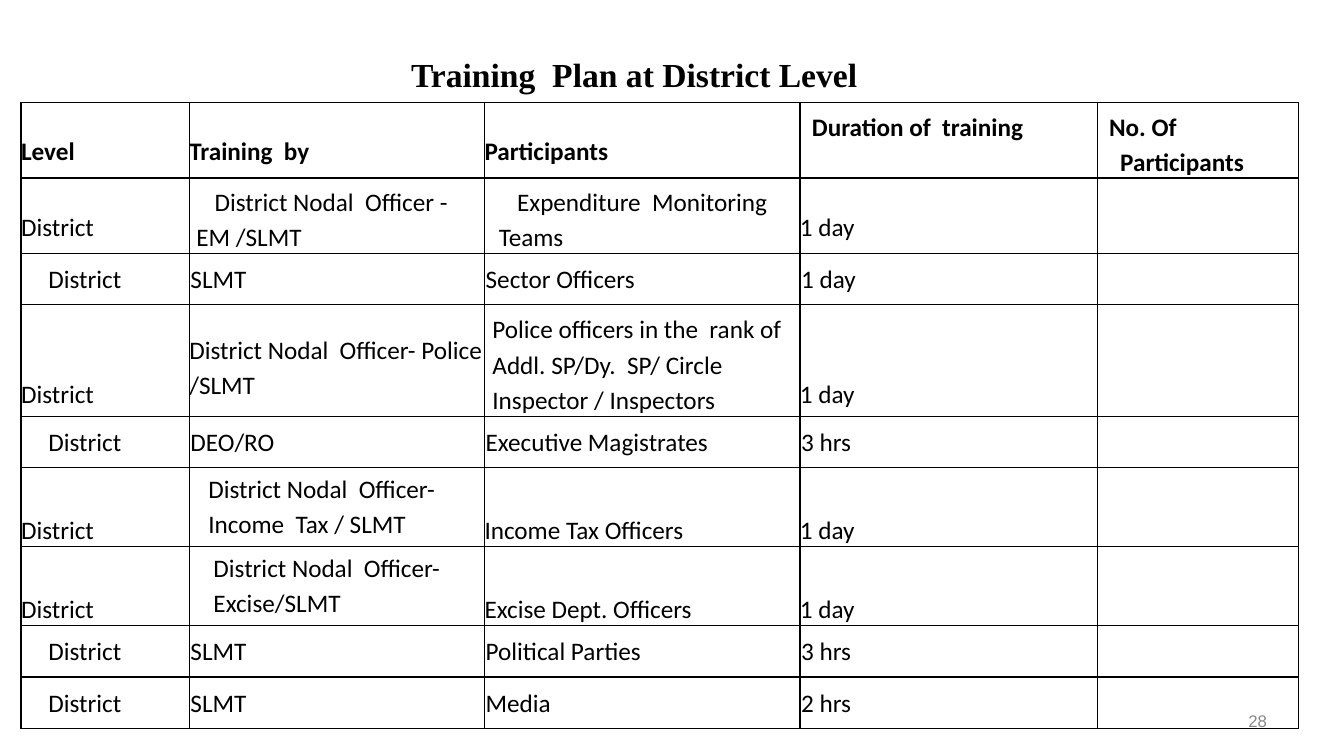
from dataclasses import dataclass

from lxml import etree
from pptx import Presentation
from pptx.dml.color import RGBColor
from pptx.enum.text import MSO_ANCHOR, PP_ALIGN
from pptx.oxml.ns import qn
from pptx.util import Cm, Pt

TOP, MIDDLE = MSO_ANCHOR.TOP, MSO_ANCHOR.MIDDLE
LEFT, RIGHT = PP_ALIGN.LEFT, PP_ALIGN.RIGHT


@dataclass(frozen=True)
class Theme:
    ink: RGBColor = RGBColor(0, 0, 0)
    muted: RGBColor = RGBColor(0x89, 0x89, 0x89)
    title_font: str = "Times New Roman"
    table_font: str = "Calibri"
    number_font: str = "Arial"
    title_size: Pt = Pt(24)
    table_size: Pt = Pt(18)
    number_size: Pt = Pt(12)
    border: Pt = Pt(1)


@dataclass(frozen=True)
class Layout:
    """Placement of text in a cell, in centimetres."""
    top: float
    left: float = 0
    first_line: float = 0
    right: float = 0
    line_spacing: float = 1.0


THEME = Theme()

# Cell layouts
LOW = Layout(0.86)
LOWER = Layout(1.21)
LOWEST = Layout(1.9)
SINGLE = Layout(0.28, left=0.03)
SINGLE_LEVEL = Layout(0.28, left=0.69)
HANGING = Layout(0.13, 0.58, -0.28, line_spacing=1.14)
NODAL_EM = Layout(0.13, 0.18, 0.46, right=0.75, line_spacing=1.14)
TEAMS = Layout(0.13, 0.36, 0.46, line_spacing=1.14)
NODAL_POLICE = Layout(0.69, line_spacing=1.14)
POLICE = Layout(0.15, 0.2, line_spacing=1.15)
NODAL_TAX = Layout(0.05, 0.48, line_spacing=1.15)
NODAL_EXCISE = Layout(0.05, 0.61, line_spacing=1.15)

SINGLE_ROW = (SINGLE_LEVEL, SINGLE, SINGLE, SINGLE)
COLUMN_WIDTHS = (4.24, 7.44, 7.95, 7.49, 5.08)

# Row height, texts, cell layouts
PLAN = (
    (1.63, ("Level", "Training  by", "Participants", "Duration of  training",
            "No. Of Participants"), (LOW, LOW, LOW, HANGING, HANGING)),
    (1.85, ("District", "District Nodal  Officer - EM /SLMT",
            "Expenditure  Monitoring Teams", "1 day"),
     (LOW, NODAL_EM, TEAMS, LOW)),
    (1.28, ("District", "SLMT", "Sector Officers", "1 day"), SINGLE_ROW),
    (2.49, ("District", "District Nodal  Officer- Police /SLMT",
            "Police officers in the  rank of Addl. SP/Dy.  SP/ Circle  "
            "Inspector / Inspectors", "1 day"),
     (LOWEST, NODAL_POLICE, POLICE, LOWEST)),
    (1.3, ("District", "DEO/RO", "Executive Magistrates", "3 hrs"), SINGLE_ROW),
    (1.98, ("District", "District Nodal  Officer- Income  Tax / SLMT",
            "Income Tax Officers", "1 day"),
     (LOWER, NODAL_TAX, LOWER, LOWER)),
    (1.98, ("District", "District Nodal  Officer-  Excise/SLMT",
            "Excise Dept. Officers", "1 day"),
     (LOWER, NODAL_EXCISE, LOWER, LOWER)),
    (1.3, ("District", "SLMT", "Political Parties", "3 hrs"), SINGLE_ROW),
    (1.3, ("District", "SLMT", "Media", "2 hrs"), SINGLE_ROW),
)


def style_font(font, name, size, color, bold=False):
    font.name, font.size, font.bold = name, size, bold
    font.color.rgb = color


def add_label(slide, box, text, align, anchor, margins, font_style):
    frame = slide.shapes.add_textbox(*map(Cm, box)).text_frame
    frame.word_wrap = True
    frame.vertical_anchor = anchor
    frame.margin_left = frame.margin_right = Cm(margins[0])
    frame.margin_top = frame.margin_bottom = Cm(margins[1])
    line = frame.paragraphs[0]
    line.text, line.alignment = text, align
    style_font(line.font, *font_style)


def draw_borders(cell):
    properties = cell._tc.get_or_add_tcPr()
    for position, side in enumerate(("lnL", "lnR", "lnT", "lnB")):
        border = etree.Element(qn(f"a:{side}"), w=str(int(THEME.border)))
        fill = etree.SubElement(border, qn("a:solidFill"))
        etree.SubElement(fill, qn("a:srgbClr"), val=str(THEME.ink))
        properties.insert(position, border)


def write_cell(cell, text, layout, bold):
    cell.vertical_anchor = TOP
    cell.margin_left = cell.margin_bottom = 0
    cell.margin_right, cell.margin_top = Cm(layout.right), Cm(layout.top)
    line = cell.text_frame.paragraphs[0]
    line.text, line.line_spacing = text, layout.line_spacing
    style_font(line.font, THEME.table_font, THEME.table_size, THEME.ink, bold)
    indents = line._p.get_or_add_pPr()
    indents.set("marL", str(Cm(layout.left)))
    indents.set("indent", str(Cm(layout.first_line)))


def add_plan_table(slide, left, top):
    heights = [height for height, _, _ in PLAN]
    plan = slide.shapes.add_table(
        len(PLAN), len(COLUMN_WIDTHS), Cm(left), Cm(top),
        Cm(sum(COLUMN_WIDTHS)), Cm(sum(heights))).table
    plan.first_row = plan.horz_banding = False
    for column, width in zip(plan.columns, COLUMN_WIDTHS):
        column.width = Cm(width)
    for index, (height, texts, layouts) in enumerate(PLAN):
        row = plan.rows[index]
        row.height = Cm(height)
        for cell in row.cells:
            cell.fill.background()
            draw_borders(cell)
        for cell, text, layout in zip(row.cells, texts, layouts):
            write_cell(cell, text, layout, bold=index == 0)


def main():
    deck = Presentation()
    deck.slide_width, deck.slide_height = Cm(33.87), Cm(19.05)
    slide = deck.slides.add_slide(deck.slide_layouts[6])

    # Training plan
    add_plan_table(slide, 0.53, 2.59)

    # Title
    add_label(slide, (10.36, 1.32, 14.86, 1.07),
              "Training  Plan at District Level", LEFT, TOP, (0, 0.03),
              (THEME.title_font, THEME.title_size, THEME.ink, True))

    # Slide number
    add_label(slide, (24.28, 17.65, 7.9, 1.02), "28", RIGHT, MIDDLE,
              (0.25, 0.13),
              (THEME.number_font, THEME.number_size, THEME.muted))

    deck.save("out.pptx")


if __name__ == "__main__":
    main()
